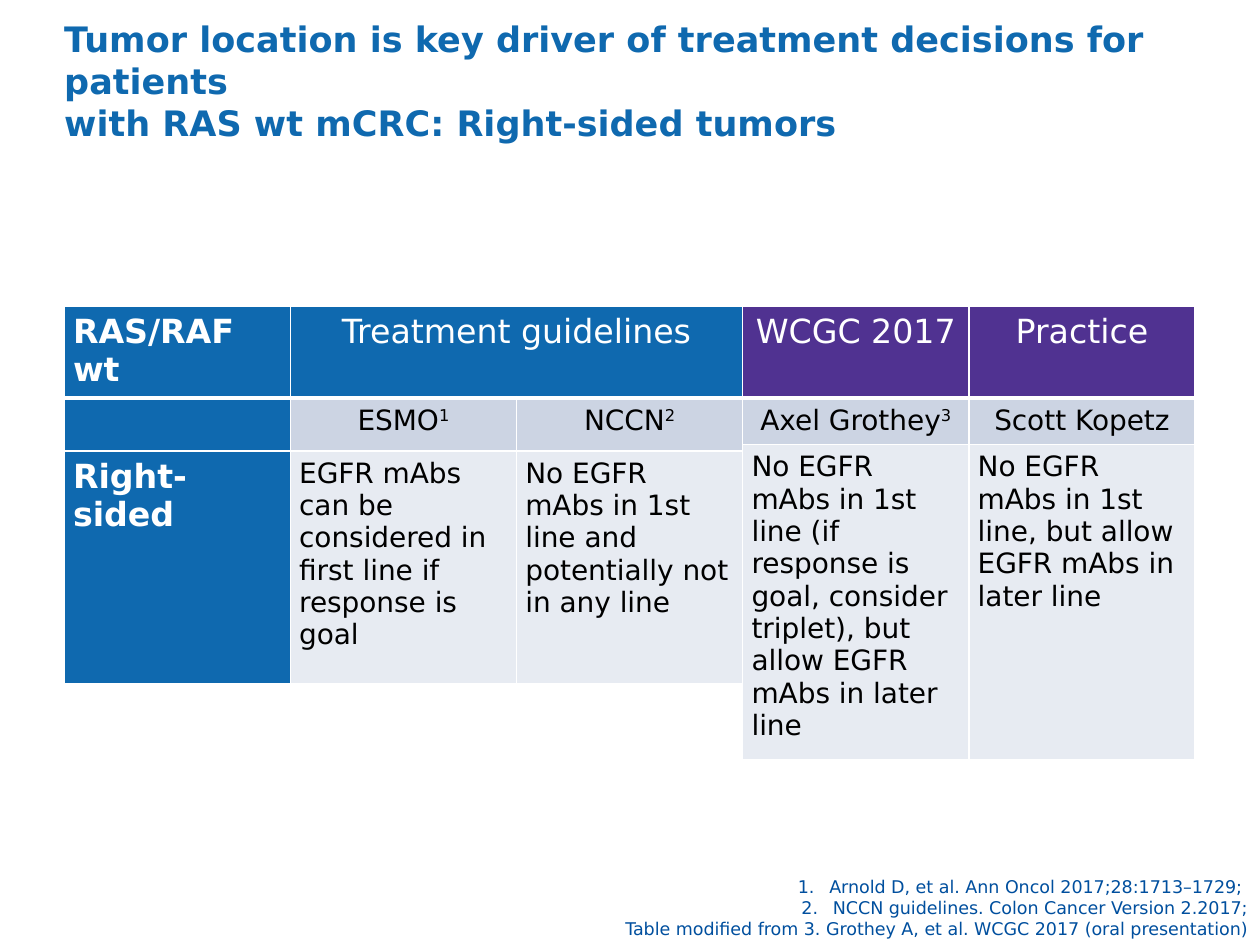
from lxml.etree import SubElement
from pptx import Presentation
from pptx.dml.color import RGBColor
from pptx.enum.text import MSO_ANCHOR, MSO_AUTO_SIZE, PP_ALIGN
from pptx.oxml import parse_xml
from pptx.oxml.ns import nsdecls, qn
from pptx.util import Inches, Pt

FONT = "DejaVu Sans"
BLUE = RGBColor(0x0F, 0x69, 0xAF)
NAVY = RGBColor(0x00, 0x4F, 0x9E)
PURPLE = RGBColor(0x50, 0x32, 0x91)
MID = RGBColor(0xCC, 0xD4, 0xE3)
PALE = RGBColor(0xE7, 0xEB, 0xF2)
WHITE = RGBColor(0xFF, 0xFF, 0xFF)
BLACK = RGBColor(0, 0, 0)

TITLE = ("Tumor location is key driver of treatment decisions for patients \n"
         "with RAS wt mCRC: Right-sided tumors")
NOTES = [
    "Arnold D, et al. Ann Oncol 2017;28:1713–1729; ",
    "NCCN guidelines. Colon Cancer Version 2.2017;\n"
    "Table modified from 3. Grothey A, et al. WCGC 2017 (oral presentation)",
]
GUIDES = [
    ["RAS/RAF wt", "Treatment guidelines", ""],
    ["", "ESMO^1", "NCCN^2"],
    ["Right-sided",
     "EGFR mAbs can be considered in first line if response is goal",
     "No EGFR mAbs in 1st line and potentially not in any line"],
]
VIEWS = [
    ["WCGC 2017", "Practice"],
    ["Axel Grothey^3", "Scott Kopetz"],
    ["No EGFR mAbs in 1st line (if response is goal, consider triplet), "
     "but allow EGFR mAbs in later line",
     "No EGFR mAbs in 1st line, but allow EGFR mAbs in later line"],
]
LEFT, TOP, COL = 0.51, 2.43, 1.795


def write(para, text, size=16, color=BLACK, bold=False, align=PP_ALIGN.LEFT):
    para.alignment = align
    for row, line in enumerate(text.split("\n")):
        if row:
            para.add_line_break()
        for raised, part in enumerate(line.split("^")):
            run = para.add_run()
            run.text = part
            font = run.font
            font.name, font.size, font.bold = FONT, Pt(size), bold
            font.color.rgb = color
            if raised:
                run._r.get_or_add_rPr().set("baseline", "30000")


def edge(cell, base):
    props = cell._tc.get_or_add_tcPr()
    for spot, side in enumerate("LRTB"):
        width = Pt(base if side == "B" else 1)
        props.insert(spot, parse_xml(
            f'<a:ln{side} {nsdecls("a")} w="{width}"><a:solidFill>'
            f'<a:srgbClr val="{WHITE}"/></a:solidFill></a:ln{side}>'))


def grid(slide, data, left, heights, head, labels=False):
    wide = len(data[0])
    table = slide.shapes.add_table(
        len(data), wide, Inches(left), Inches(TOP),
        Inches(COL * wide), Inches(sum(heights))).table
    for col in table.columns:
        col.width = Inches(COL)
    for r, row in enumerate(data):
        table.rows[r].height = Inches(heights[r])
        for c, text in enumerate(row):
            cell = table.cell(r, c)
            label = labels and c == 0
            strong = r == 0 or label
            cell.margin_left = cell.margin_right = Inches(0.07)
            cell.margin_top = cell.margin_bottom = Inches(0.05)
            cell.fill.solid()
            cell.fill.fore_color.rgb = head if strong else (MID if r == 1 else PALE)
            edge(cell, 3 if r == 0 else 1)
            if text:
                write(cell.text_frame.paragraphs[0], text,
                      size=19 if strong else 16,
                      color=WHITE if strong else BLACK, bold=label,
                      align=PP_ALIGN.LEFT if label or r == 2 else PP_ALIGN.CENTER)
    return table


def place(shape, left, top, width, height):
    shape.left, shape.top = Inches(left), Inches(top)
    shape.width, shape.height = Inches(width), Inches(height)
    frame = shape.text_frame
    frame.word_wrap = True
    frame.auto_size = MSO_AUTO_SIZE.NONE
    frame.vertical_anchor = MSO_ANCHOR.BOTTOM
    return frame


def main():
    deck = Presentation()
    deck.slide_width, deck.slide_height = Inches(10), Inches(7.5)
    slide = deck.slides.add_slide(deck.slide_layouts[5])

    table = grid(slide, GUIDES, LEFT, [0.73, 0.42, 1.85], BLUE, labels=True)
    table.cell(0, 1).merge(table.cell(0, 2))
    grid(slide, VIEWS, LEFT + 3 * COL, [0.73, 0.37, 2.5], PURPLE)

    title = slide.shapes.title
    title.fill.solid()
    title.fill.fore_color.rgb = WHITE
    frame = place(title, LEFT, 0.13, 5 * COL, 1.03)
    frame.margin_left = frame.margin_right = frame.margin_top = 0
    frame.margin_bottom = Inches(0.02)
    para = frame.paragraphs[0]
    para.line_spacing = Pt(24)
    write(para, TITLE, size=20, color=BLUE, bold=True)

    box = slide.shapes.add_textbox(0, 0, 0, 0)
    frame = place(box, 3.57, 6.89, 6.43, 0.61)
    for n, text in enumerate(NOTES):
        para = frame.add_paragraph() if n else frame.paragraphs[0]
        props = para._p.get_or_add_pPr()
        props.set("marL", str(Inches(0.25)))
        props.set("indent", str(Inches(-0.25)))
        mark = SubElement(props, qn("a:buAutoNum"))
        mark.set("type", "arabicPeriod")
        write(para, text, size=10, color=NAVY, align=PP_ALIGN.RIGHT)

    deck.save("out.pptx")


if __name__ == "__main__":
    main()
